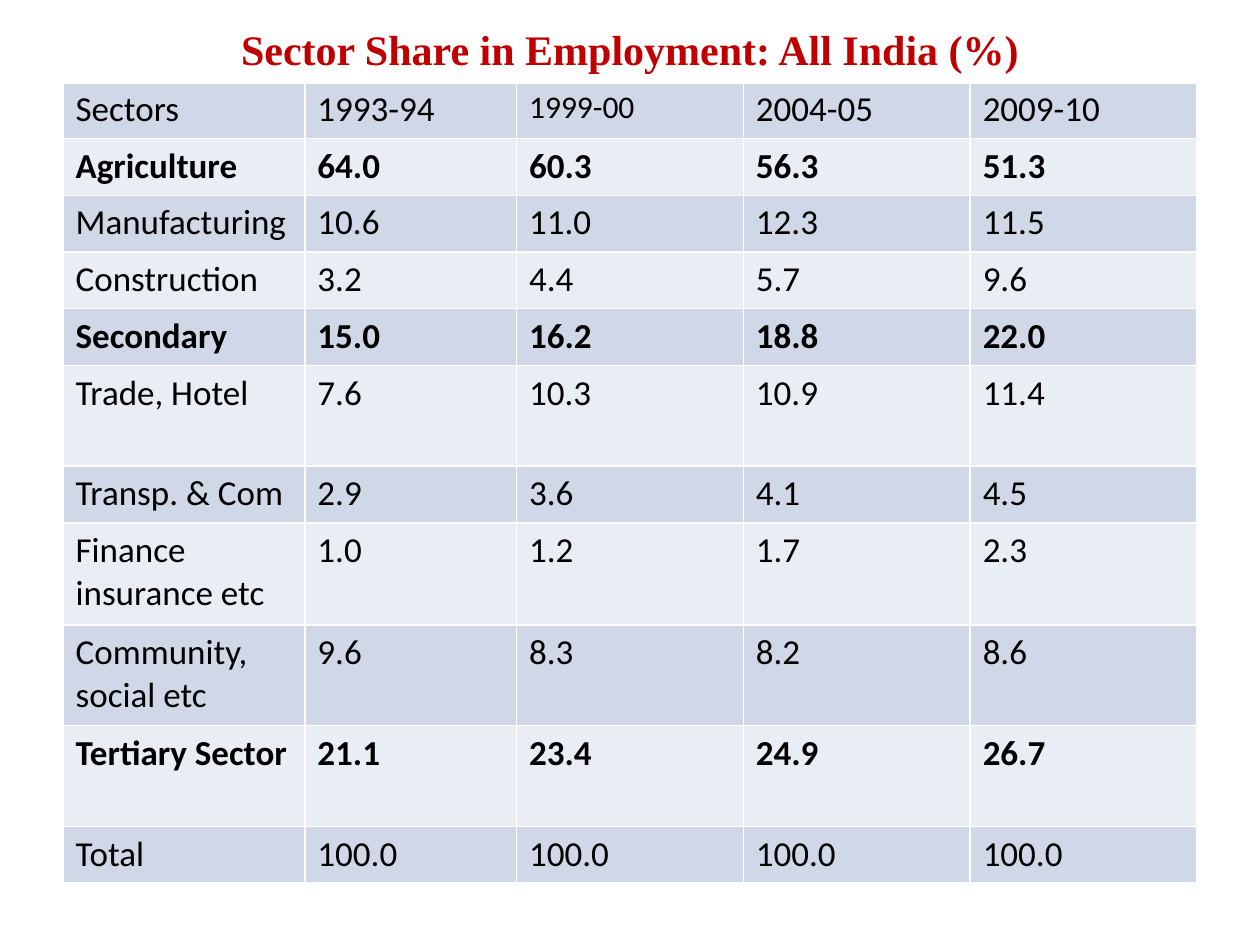
from dataclasses import dataclass

from lxml.etree import SubElement
from pptx import Presentation
from pptx.dml.color import RGBColor as RGB
from pptx.enum.text import PP_ALIGN as Align
from pptx.oxml.ns import qn
from pptx.util import Inches, Pt


@dataclass(frozen=True)
class Theme:
    title_font: str = "Times New Roman"
    body_font: str = "Calibri"
    title_color: str = "C00000"
    text_color: str = "000000"
    border_color: str = "FFFFFF"
    title_fill: str = "FFFFFF"
    bands: tuple = ("D0D8E8", "E9EDF4")
    title_size: int = 24
    body_size: int = 20
    small_size: int = 18
    border: int = 1
    title_rule: int = 3


THEME = Theme()
TITLE = "Sector Share in Employment: All India (%)"
COLUMN_WIDTHS = (1.92, 1.68, 1.8, 1.8, 1.8)
TITLE_HEIGHT = 0.48
ROWS = (
    (0.45, "Sectors", "1993-94", "1999-00", "2004-05", "2009-10"),
    (0.45, "Agriculture", "64.0", "60.3", "56.3", "51.3"),
    (0.45, "Manufacturing", "10.6", "11.0", "12.3", "11.5"),
    (0.45, "Construction", "3.2", "4.4", "5.7", "9.6"),
    (0.45, "Secondary", "15.0", "16.2", "18.8", "22.0"),
    (0.8, "Trade, Hotel", "7.6", "10.3", "10.9", "11.4"),
    (0.45, "Transp. & Com", "2.9", "3.6", "4.1", "4.5"),
    (0.81, "Finance insurance etc", "1.0", "1.2", "1.7", "2.3"),
    (0.8, "Community, social etc", "9.6", "8.3", "8.2", "8.6"),
    (0.8, "Tertiary Sector", "21.1", "23.4", "24.9", "26.7"),
    (0.45, "Total", "100.0", "100.0", "100.0", "100.0"),
)
BOLD_ROWS = {"Agriculture", "Secondary", "Tertiary Sector"}
SMALL_LABEL = "1999-00"


def add_text(tf, text, font=THEME.body_font, size=THEME.body_size,
             color=THEME.text_color, bold=False, align=Align.LEFT):
    p = tf.paragraphs[0]
    p.alignment = align
    r = p.add_run()
    r.text = text
    r.font.name = font
    r.font.size = Pt(size)
    r.font.bold = bold
    r.font.color.rgb = RGB.from_string(color)


def style_cell(cell, fill, top=THEME.border, bottom=THEME.border):
    tc_pr = cell._tc.get_or_add_tcPr()
    widths = {"lnL": THEME.border, "lnR": THEME.border, "lnT": top, "lnB": bottom}
    for side, width in widths.items():
        ln = SubElement(tc_pr, qn(f"a:{side}"), w=str(Pt(width)))
        solid = SubElement(ln, qn("a:solidFill"))
        SubElement(solid, qn("a:srgbClr"), val=THEME.border_color)
    cell.fill.solid()
    cell.fill.fore_color.rgb = RGB.from_string(fill)


def add_title_row(table):
    for cell in table.rows[0].cells:
        style_cell(cell, THEME.title_fill, bottom=THEME.title_rule)
    title = table.cell(0, 0)
    title.merge(table.cell(0, len(COLUMN_WIDTHS) - 1))
    add_text(title.text_frame, TITLE, font=THEME.title_font, size=THEME.title_size,
             color=THEME.title_color, bold=True, align=Align.CENTER)


def add_employment_table(s, left, top, width, height):
    shape = s.shapes.add_table(len(ROWS) + 1, len(COLUMN_WIDTHS),
                               left, top, width, height)
    table = shape.table
    for column, inches in zip(table.columns, COLUMN_WIDTHS):
        column.width = Inches(inches)
    heights = [TITLE_HEIGHT] + [row[0] for row in ROWS]
    for row, inches in zip(table.rows, heights):
        row.height = Inches(inches)

    add_title_row(table)
    for i, (_, *values) in enumerate(ROWS):
        rule = THEME.title_rule if i == 0 else THEME.border
        for j, value in enumerate(values):
            cell = table.cell(i + 1, j)
            style_cell(cell, THEME.bands[i % 2], top=rule)
            size = THEME.small_size if value == SMALL_LABEL else THEME.body_size
            add_text(cell.text_frame, value, size=size, bold=values[0] in BOLD_ROWS)


def main():
    prs = Presentation()
    prs.slide_width, prs.slide_height = Inches(10), Inches(7.5)
    s = prs.slides.add_slide(prs.slide_layouts[6])
    add_employment_table(s, Inches(0.5), Inches(0.17), Inches(9), Inches(6.84))
    prs.save("out.pptx")


if __name__ == "__main__":
    main()
